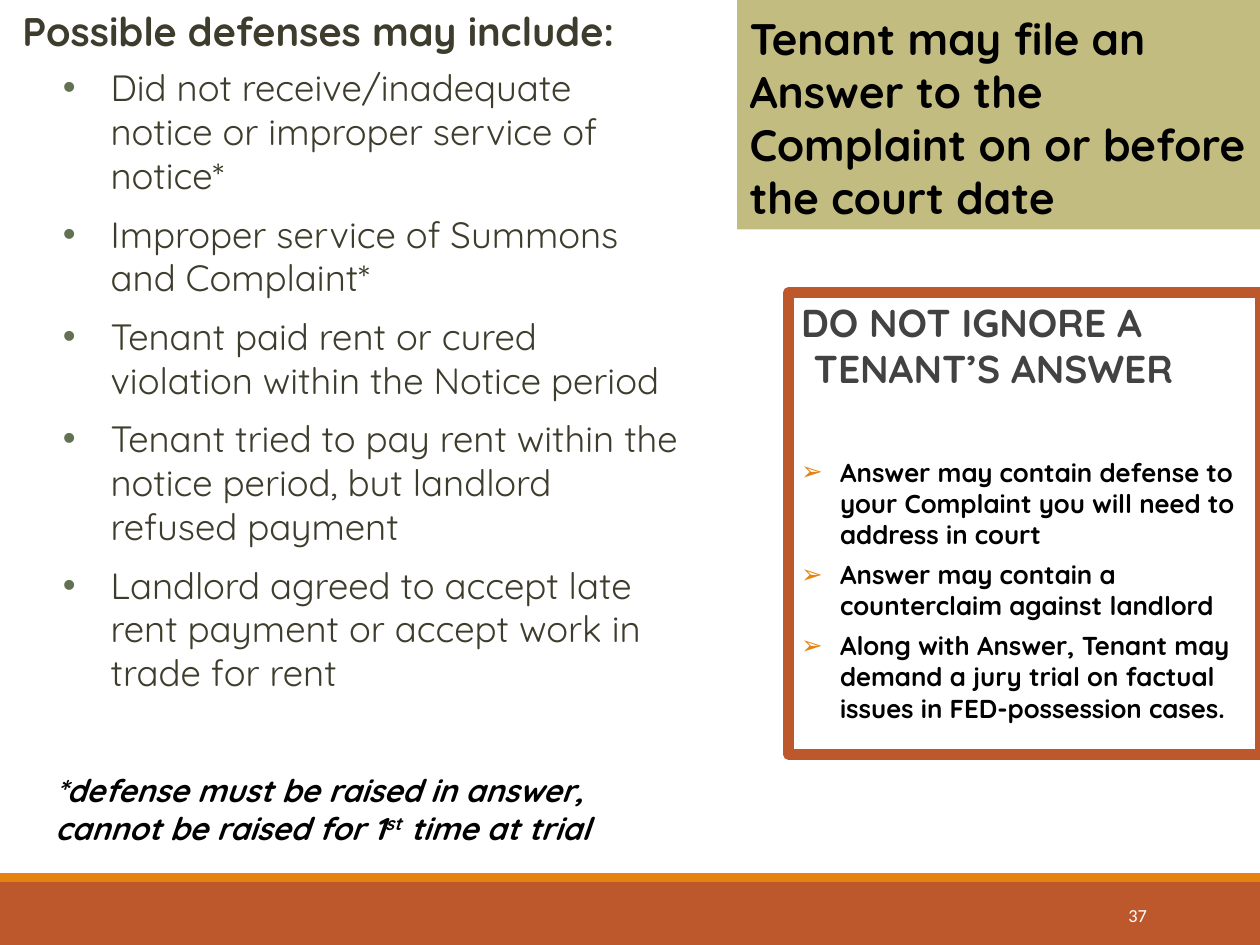
"""Build the slide on a tenant's answer and possible defenses."""
from lxml.etree import SubElement
from pptx import Presentation
from pptx.dml.color import RGBColor
from pptx.enum.shapes import MSO_SHAPE
from pptx.enum.text import MSO_ANCHOR, PP_ALIGN
from pptx.oxml.ns import qn
from pptx.util import Inches, Pt

RUST = RGBColor(0xBD, 0x58, 0x2C)
ORANGE = RGBColor(0xE4, 0x83, 0x12)
KHAKI = RGBColor(0xC2, 0xBC, 0x80)
OLIVE = RGBColor(0x3E, 0x3D, 0x2D)
SAGE = RGBColor(0x63, 0x70, 0x52)
GRAY = RGBColor(0x42, 0x42, 0x42)
BLACK = RGBColor(0, 0, 0)
WHITE = RGBColor(255, 255, 255)

TITLE = "Tenant may file an Answer to the Complaint on or before the court date"
DEFENSES_HEADING = "Possible defenses may include:"
DEFENSES = [
    "Did not receive/inadequate notice or improper service of notice*",
    "Improper service of Summons and Complaint*",
    "Tenant paid rent or cured violation within the Notice period",
    "Tenant tried to pay rent within the notice period, but landlord refused payment",
    "Landlord agreed to accept late rent payment or accept work in trade for rent",
]
WARNING_HEADING = "DO NOT IGNORE A TENANT’S ANSWER"
WARNINGS = [
    "Answer may contain defense to your Complaint you will need to address in court",
    "Answer may contain a counterclaim against landlord",
    "Along with Answer, Tenant may demand a jury trial on factual issues in FED-possession cases.",
]
FOOTNOTE = ["*defense must be raised in answer, cannot be raised for 1", "st", " time at trial"]
PAGE = "37"

WIDTH, HEIGHT = 10, 7.5
FOOTER_TOP, STRIPE = 7, 0.07
TITLE_LEFT, WARNING_LEFT = 5.85, 6.26

deck = Presentation()
deck.slide_width, deck.slide_height = Inches(WIDTH), Inches(HEIGHT)
slide = deck.slides.add_slide(deck.slide_layouts[6])


def add_box(left, top, width, height, fill=None, line=None):
    box = slide.shapes.add_shape(MSO_SHAPE.RECTANGLE, *map(Inches, (left, top, width, height)))
    box.shadow.inherit = False
    if fill is None:
        box.fill.background()
    else:
        box.fill.solid()
        box.fill.fore_color.rgb = fill
    if line is None:
        box.line.fill.background()
    else:
        box.line.color.rgb = line
        box.line.width = Pt(6)
    return box


def add_area(left, top, width, height):
    return slide.shapes.add_textbox(*map(Inches, (left, top, width, height)))


def write(holder, *parts, size, color, font="Quicksand", bold=False, italic=False,
          align=PP_ALIGN.LEFT, anchor=MSO_ANCHOR.TOP, before=0, after=0,
          margin=0, indent=0, bullet=None, bullet_color=None, raised=()):
    frame = holder.text_frame
    frame.word_wrap = True
    frame.vertical_anchor = anchor
    paragraph = frame.add_paragraph() if frame.text else frame.paragraphs[0]
    paragraph.alignment = align
    paragraph.space_before, paragraph.space_after = Pt(before), Pt(after)
    properties = paragraph._p.get_or_add_pPr()
    properties.set("marL", str(Inches(margin)))
    properties.set("indent", str(Inches(indent)))
    if bullet:
        tint = SubElement(properties, qn("a:buClr"))
        SubElement(tint, qn("a:srgbClr"), val=str(bullet_color))
        SubElement(properties, qn("a:buFont"), typeface="Arial")
        SubElement(properties, qn("a:buChar"), char=bullet)
    for part in parts:
        run = paragraph.add_run()
        run.text = part
        run.font.name, run.font.size = font, Pt(size)
        run.font.bold, run.font.italic = bold, italic
        run.font.color.rgb = color
        if part in raised:
            run.font._element.set("baseline", "30000")


add_box(0, FOOTER_TOP, WIDTH, HEIGHT - FOOTER_TOP, fill=RUST)
add_box(0, FOOTER_TOP - STRIPE, WIDTH, STRIPE, fill=ORANGE)
write(add_area(8.12, 7.06, 1.08, 0.4), PAGE, size=10.5, color=WHITE, font="Calibri",
      align=PP_ALIGN.RIGHT, anchor=MSO_ANCHOR.MIDDLE)

defenses = add_area(0, 0, 5.52, 6.78)
write(defenses, DEFENSES_HEADING, size=22.8, color=OLIVE, bold=True,
      before=4.8, after=2, margin=0.08)
for defense in DEFENSES:
    write(defenses, defense, size=20.9, color=OLIVE, before=4.4, after=4,
          margin=0.78, indent=-0.38, bullet="•", bullet_color=SAGE)

write(add_box(TITLE_LEFT, 0, WIDTH - TITLE_LEFT, 1.82, fill=KHAKI), TITLE,
      size=25.2, color=BLACK, bold=True, anchor=MSO_ANCHOR.BOTTOM)

warning_box = add_box(WARNING_LEFT, 2.32, WIDTH - WARNING_LEFT, 3.67, line=RUST)
write(warning_box, WARNING_HEADING, size=22.2, color=GRAY, bold=True,
      before=3.2, after=2, margin=0.1, indent=-0.1)
for row, warning in enumerate(WARNINGS):
    write(warning_box, warning, size=14.8, color=BLACK, bold=True,
          before=3.2 if row else 35, after=2, margin=0.31, indent=-0.31,
          bullet="➢", bullet_color=ORANGE)

write(add_area(0.34, 6.07, 4.83, 0.7), *FOOTNOTE, size=18, color=BLACK,
      bold=True, italic=True, raised=("st",))

deck.save("out.pptx")
